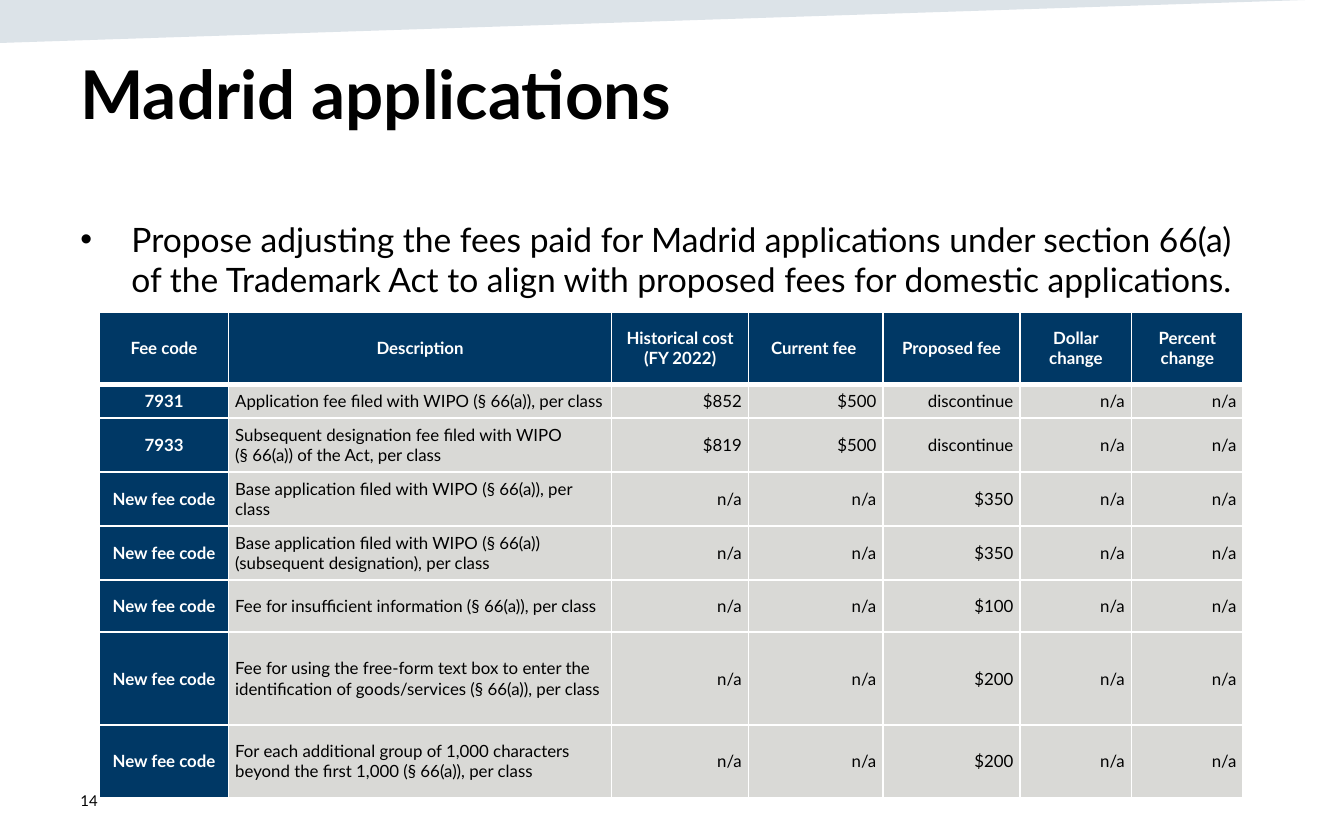
from lxml.etree import SubElement
from pptx import Presentation
from pptx.dml.color import RGBColor
from pptx.enum.text import MSO_ANCHOR as Anchor, PP_ALIGN as Align
from pptx.oxml.ns import qn
from pptx.util import Inches, Pt

FONT = "Lato"
COLORS = {"navy": "003865", "gray": "D9D9D6", "white": "FFFFFF", "black": "000000", "band": "164469"}

TITLE = "Madrid applications"
PROPOSAL = ("Propose adjusting the fees paid for Madrid applications under section 66(a) "
            "of the Trademark Act to align with proposed fees for domestic applications.")
PAGE_NUMBER = "14"

HEADER = ("Fee code", "Description", "Historical cost\n(FY 2022)", "Current fee ",
          "Proposed fee", "Dollar change", "Percent change")
NEW, NA = "New fee code", "n/a"
FEES = [
    ("7931", "Application fee filed with WIPO (§ 66(a)), per class", "$852", "$500", "discontinue"),
    ("7933", "Subsequent designation fee filed with WIPO\n(§ 66(a)) of the Act, per class",
     "$819", "$500", "discontinue"),
    (NEW, "Base application filed with WIPO (§ 66(a)), per class", NA, NA, "$350"),
    (NEW, "Base application filed with WIPO (§ 66(a)) (subsequent designation), per class",
     NA, NA, "$350"),
    (NEW, "Fee for insufficient information (§ 66(a)), per class", NA, NA, "$100"),
    (NEW, "Fee for using the free-form text box to enter the identification of "
          "goods/services (§ 66(a)), per class", NA, NA, "$200"),
    (NEW, "For each additional group of 1,000 characters beyond the first 1,000 (§ 66(a)), per class",
     NA, NA, "$200"),
]
ROWS = [HEADER] + [fee + (NA, NA) for fee in FEES]
COLUMN_WIDTHS = (0.96, 2.85, 1.02, 1, 1.02, 0.83, 0.83)
ROW_HEIGHTS = (0.54, 0.24, 0.39, 0.39, 0.39, 0.39, 0.69, 0.54)


def color(name):
    return RGBColor.from_string(COLORS[name])


def format_text(frame, size, ink="black", bold=False, align=Align.LEFT):
    for paragraph in frame.paragraphs:
        paragraph.alignment = align
        for run in paragraph.runs:
            run.font.name = FONT
            run.font.size = Pt(size)
            run.font.bold = bold
            run.font.color.rgb = color(ink)


def add_text(slide, box, text, size, bold=False, anchor=Anchor.TOP):
    frame = slide.shapes.add_textbox(*map(Inches, box)).text_frame
    frame.word_wrap = True
    frame.vertical_anchor = anchor
    frame.text = text
    format_text(frame, size, bold=bold)
    return frame


def add_bullet(paragraph, indent):
    properties = paragraph._p.get_or_add_pPr()
    properties.set("marL", str(Inches(indent)))
    properties.set("indent", str(-Inches(indent)))
    SubElement(properties, qn("a:buFont"), typeface="Arial")
    SubElement(properties, qn("a:buChar"), char="•")


def add_borders(cell, bottom_width):
    properties = cell._tc.get_or_add_tcPr()
    for side, width in (("L", 1), ("R", 1), ("T", 1), ("B", bottom_width)):
        line = SubElement(properties, qn(f"a:ln{side}"), w=str(Pt(width)))
        fill = SubElement(line, qn("a:solidFill"))
        SubElement(fill, qn("a:srgbClr"), val=COLORS["white"])


def fill_cell(cell, text, row, column):
    is_header = row == 0
    is_navy = is_header or column == 0
    align = Align.CENTER if is_navy else Align.LEFT if column == 1 else Align.RIGHT
    add_borders(cell, 3 if is_header else 1)
    cell.fill.solid()
    cell.fill.fore_color.rgb = color("navy" if is_navy else "gray")
    cell.margin_left = cell.margin_right = cell.margin_top = cell.margin_bottom = Inches(0.05)
    cell.vertical_anchor = Anchor.MIDDLE
    cell.text_frame.text = text
    format_text(cell.text_frame, 9, "white" if is_navy else "black", is_navy, align)
    if not is_header and "\n" not in text:
        paragraph = cell.text_frame.paragraphs[0]
        paragraph.space_before = paragraph.space_after = Pt(6)


def add_band(slide):
    builder = slide.shapes.build_freeform(0, 0, scale=Inches(0.01))
    builder.add_line_segments([(0, 32), (1002, -1)], close=True)
    band = builder.convert_to_shape()
    band.shadow.inherit = False
    band.line.fill.background()
    band.fill.solid()
    band.fill.fore_color.rgb = color("band")
    tint = band._element.spPr.find(qn("a:solidFill")).find(qn("a:srgbClr"))
    SubElement(tint, qn("a:alpha"), val="15000")


def add_fee_table(slide):
    frame = slide.shapes.add_table(len(ROWS), len(HEADER), Inches(0.74), Inches(2.32),
                                   Inches(sum(COLUMN_WIDTHS)), Inches(sum(ROW_HEIGHTS)))
    fees = frame.table
    fees.horz_banding = False
    for column, width in zip(fees.columns, COLUMN_WIDTHS):
        column.width = Inches(width)
    for row, height in zip(fees.rows, ROW_HEIGHTS):
        row.height = Inches(height)
    for r, texts in enumerate(ROWS):
        for c, text in enumerate(texts):
            fill_cell(fees.cell(r, c), text, r, c)


def main():
    deck = Presentation()
    deck.slide_width, deck.slide_height = Inches(10), Inches(6.25)
    slide = deck.slides.add_slide(deck.slide_layouts[6])
    add_band(slide)
    add_text(slide, (0.5, 0.34, 9, 1.04), TITLE, 36, bold=True)
    proposal = add_text(slide, (0.5, 1.58, 9, 4.14), PROPOSAL, 18).paragraphs[0]
    proposal.space_before = Pt(9)
    add_bullet(proposal, 0.38)
    add_fee_table(slide)
    add_text(slide, (0.5, 5.79, 2.25, 0.33), PAGE_NUMBER, 8, anchor=Anchor.MIDDLE)
    deck.save("out.pptx")


if __name__ == "__main__":
    main()
